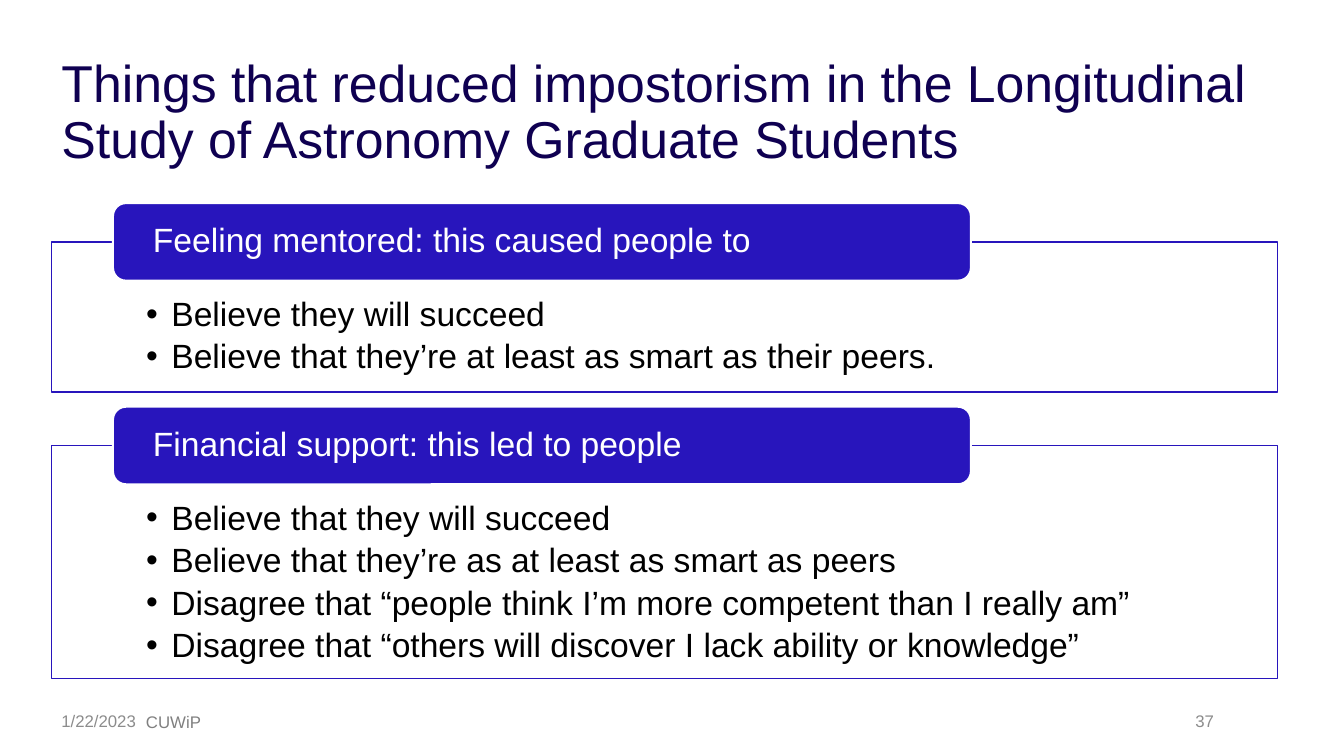
from lxml.etree import SubElement
from pptx import Presentation
from pptx.dml.color import RGBColor
from pptx.enum.shapes import MSO_SHAPE
from pptx.enum.text import MSO_ANCHOR, MSO_AUTO_SIZE, PP_ALIGN
from pptx.oxml.ns import qn
from pptx.util import Inches, Pt

TITLE = ("Things that reduced impostorism in the Longitudinal "
         "Study of Astronomy Graduate Students")
# heading, panel top, panel height, bullets
PANELS = [
    ("Feeling mentored: this caused people to", 2.4, 1.49, [
        "Believe they will succeed",
        "Believe that they’re at least as smart as their peers.",
    ]),
    ("Financial support: this led to people", 4.42, 2.31, [
        "Believe that they will succeed",
        "Believe that they’re as at least as smart as peers",
        "Disagree that “people think I’m more competent than I really am”",
        "Disagree that “others will discover I lack ability or knowledge”",
    ]),
]
# text, left, top, width, colour, alignment, anchor
FOOTERS = [
    ("1/22/2023", 0.51, 6.95, 3, "8C8C8C", PP_ALIGN.LEFT, MSO_ANCHOR.MIDDLE),
    ("CUWiP", 1.35, 7.01, 4.5, "808080", PP_ALIGN.LEFT, MSO_ANCHOR.TOP),
    ("37", 9.14, 6.95, 3, "8C8C8C", PP_ALIGN.RIGHT, MSO_ANCHOR.MIDDLE),
]
LEFT, WIDTH = 0.51, 12.16
TAB_LEFT, TAB_WIDTH, TAB_HEIGHT = 1.12, 8.51, 0.77
BLUE, WHITE = "2815BC", "FFFFFF"


def rgb(value):
    return RGBColor.from_string(value)


def place(sp, left, top, width, height):
    sp.left, sp.top = Inches(left), Inches(top)
    sp.width, sp.height = Inches(width), Inches(height)


def paint(sp, fill, line, weight):
    sp.fill.solid()
    sp.fill.fore_color.rgb = rgb(fill)
    sp.line.color.rgb = rgb(line)
    sp.line.width = Pt(weight)


def write(sp, lines, size, color, anchor, align=PP_ALIGN.LEFT,
          spacing=0.9, after=0, insets=(0.1, 0.05, 0.1, 0.05)):
    """Fill a shape with paragraphs; insets run left, top, right, bottom."""
    tf = sp.text_frame
    tf.word_wrap = True
    tf.auto_size = MSO_AUTO_SIZE.NONE
    tf.vertical_anchor = anchor
    (tf.margin_left, tf.margin_top,
     tf.margin_right, tf.margin_bottom) = map(Inches, insets)
    tf.text = "\n".join(lines)
    for p in tf.paragraphs:
        p.alignment = align
        p.line_spacing = spacing
        p.space_before, p.space_after = Pt(0), Pt(after)
        p.font.name, p.font.size = "Arial", Pt(size)
        p.font.color.rgb = rgb(color)


def add_panel(s, body, heading, top, height, bullets):
    place(body, LEFT, top, WIDTH, height)
    paint(body, WHITE, BLUE, 1)
    color = body.fill._xPr.find(qn("a:solidFill"))[0]
    SubElement(color, qn("a:alpha")).set("val", "90000")
    write(body, bullets, 24, "000000", MSO_ANCHOR.TOP, after=4.5,
          insets=(0.94, 0.55, 0.94, 0.19))
    for p in body.text_frame.paragraphs:
        pPr = p._p.get_or_add_pPr()
        pPr.set("marL", str(Inches(0.25)))
        pPr.set("indent", str(Inches(-0.25)))

    tab = s.shapes.add_shape(
        MSO_SHAPE.ROUNDED_RECTANGLE, Inches(TAB_LEFT),
        Inches(top - TAB_HEIGHT / 2), Inches(TAB_WIDTH), Inches(TAB_HEIGHT))
    tab.shadow.inherit = False
    paint(tab, BLUE, WHITE, 1.5)
    write(tab, [heading], 24, WHITE, MSO_ANCHOR.MIDDLE,
          insets=(0.36, 0, 0.36, 0))


def main():
    prs = Presentation()
    prs.slide_width, prs.slide_height = Inches(13.33), Inches(7.5)
    s = prs.slides.add_slide(prs.slide_layouts.get_by_name("Two Content"))

    title, *bodies = s.placeholders
    place(title, LEFT, 0.4, WIDTH, 1.45)
    write(title, [TITLE], 37, "0F0051", MSO_ANCHOR.MIDDLE)

    for body, panel in zip(bodies, PANELS):
        add_panel(s, body, *panel)

    for text, left, top, width, color, align, anchor in FOOTERS:
        box = s.shapes.add_textbox(
            Inches(left), Inches(top), Inches(width), Inches(0.4))
        write(box, [text], 12, color, anchor, align, spacing=1, after=6)

    prs.save("out.pptx")


if __name__ == "__main__":
    main()
